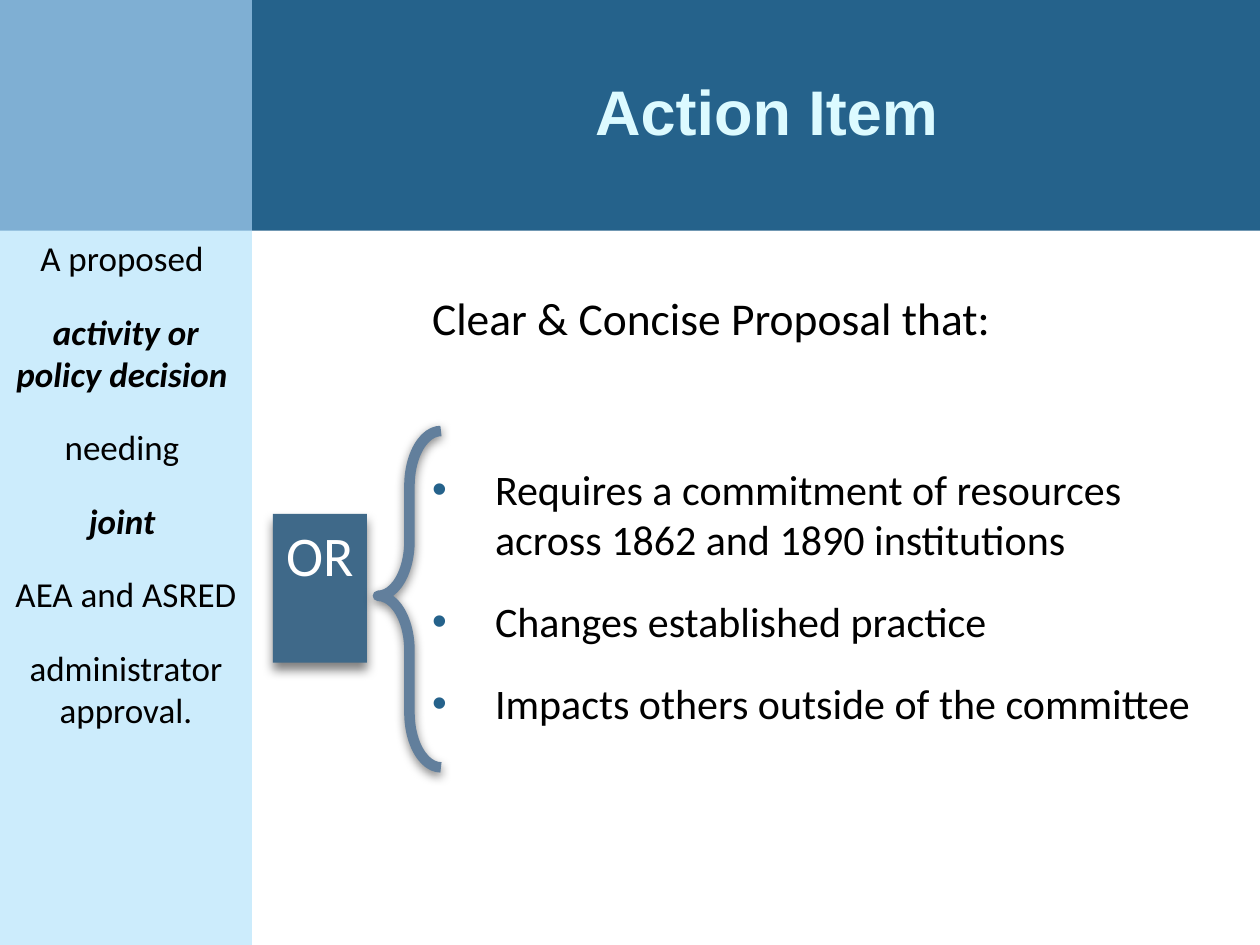
from dataclasses import dataclass

from lxml import etree
from pptx import Presentation
from pptx.dml.color import RGBColor
from pptx.enum import shapes, text
from pptx.oxml import ns
from pptx.util import Cm, Pt


@dataclass(frozen=True)
class Theme:
    banner: str = "25628B"
    sidebar: str = "CCECFC"
    corner: str = "7FAFD3"
    title: str = "DCFAFF"
    body: str = "000000"
    label_fill: str = "3F6989"
    label: str = "FFFFFF"
    brace: str = "627F9C"
    title_size: int = 36
    label_size: int = 32
    heading_size: int = 26
    bullet_size: int = 24
    sidebar_size: int = 20
    title_font: str = "Arial"
    body_font: str = "Calibri"


theme = Theme()


def add_run(paragraph, words, size, color, font=theme.body_font, bold=False, italic=False):
    run = paragraph.add_run()
    run.text = words
    run.font.name = font
    run.font.size = Pt(size)
    run.font.bold = bold
    run.font.italic = italic
    run.font.color.rgb = RGBColor.from_string(color)


def add_shadow(shape, distance):
    """Give the shape a soft black shadow falling straight down."""
    shape.shadow.inherit = False
    effects = shape._element.spPr.find(ns.qn("a:effectLst"))
    shadow = etree.SubElement(effects, ns.qn("a:outerShdw"), blurRad=str(Pt(6)),
                              dist=str(Pt(distance)), dir="5400000", rotWithShape="0")
    color = etree.SubElement(shadow, ns.qn("a:srgbClr"), val="000000")
    etree.SubElement(color, ns.qn("a:alpha"), val="50000")


presentation = Presentation()
presentation.slide_width = Cm(25.4)
presentation.slide_height = Cm(19.05)
slide = presentation.slides.add_slide(presentation.slide_layouts[6])

# Background panels
sidebar_width = Cm(5.08)
banner_height = Cm(4.65)
panels = [
    (Cm(1.27), Cm(24.13), banner_height, theme.banner),
    (0, sidebar_width, presentation.slide_height, theme.sidebar),
    (0, sidebar_width, banner_height, theme.corner),
]
for left, width, height, color in panels:
    panel = slide.shapes.add_shape(shapes.MSO_SHAPE.RECTANGLE, left, 0, width, height)
    panel.shadow.inherit = False
    panel.fill.solid()
    panel.fill.fore_color.rgb = RGBColor.from_string(color)
    panel.line.fill.background()

# Title
title = slide.shapes.add_textbox(Cm(6.78), Cm(0.64), Cm(17.35), Cm(3.18)).text_frame
title.word_wrap = True
title.vertical_anchor = text.MSO_ANCHOR.MIDDLE
title.paragraphs[0].alignment = text.PP_ALIGN.CENTER
add_run(title.paragraphs[0], "Action Item", theme.title_size, theme.title,
        theme.title_font, bold=True)

# Proposal criteria
criteria = slide.shapes.add_textbox(Cm(8.46), Cm(5.72), Cm(16.51), Cm(10.67)).text_frame
criteria.word_wrap = True
add_run(criteria.paragraphs[0], "Clear & Concise Proposal that:",
        theme.heading_size, theme.body)
bullets = [
    "Requires a commitment of resources across 1862 and 1890 institutions",
    "Changes established practice",
    "Impacts others outside of the committee",
]
for index, words in enumerate(bullets):
    paragraph = criteria.add_paragraph()
    paragraph.space_before = Pt(18 if index else 68)
    properties = paragraph._p.get_or_add_pPr()
    properties.set("marL", str(Cm(1.27)))
    properties.set("indent", str(-Cm(1.27)))
    bullet_color = etree.SubElement(properties, ns.qn("a:buClr"))
    etree.SubElement(bullet_color, ns.qn("a:srgbClr"), val=theme.banner)
    etree.SubElement(properties, ns.qn("a:buFont"), typeface="Arial")
    etree.SubElement(properties, ns.qn("a:buChar"), char="•")
    add_run(paragraph, words, theme.bullet_size, theme.body)

# Sidebar definition
definition = slide.shapes.add_textbox(0, banner_height, sidebar_width, Cm(11.51)).text_frame
definition.word_wrap = True
phrases = [
    ("A proposed ", False),
    ("activity or policy decision ", True),
    ("needing ", False),
    ("joint ", True),
    ("AEA and ASRED ", False),
    ("administrator approval.", False),
]
for index, (words, emphasis) in enumerate(phrases):
    paragraph = definition.add_paragraph() if index else definition.paragraphs[0]
    paragraph.alignment = text.PP_ALIGN.CENTER
    if index:
        paragraph.space_before = Pt(18)
    add_run(paragraph, words, theme.sidebar_size, theme.body, bold=emphasis, italic=emphasis)

# "OR" label and brace
label = slide.shapes.add_shape(shapes.MSO_SHAPE.RECTANGLE,
                               Cm(5.5), Cm(10.36), Cm(1.9), Cm(3))
label.fill.solid()
label.fill.fore_color.rgb = RGBColor.from_string(theme.label_fill)
label.line.fill.background()
add_shadow(label, 4)
label.text_frame.word_wrap = True
label.text_frame.vertical_anchor = text.MSO_ANCHOR.TOP
label.text_frame.paragraphs[0].alignment = text.PP_ALIGN.CENTER
add_run(label.text_frame.paragraphs[0], "OR", theme.label_size, theme.label)

brace = slide.shapes.add_shape(shapes.MSO_SHAPE.LEFT_BRACE,
                               Cm(7.62), Cm(8.69), Cm(1.27), Cm(6.78))
brace.adjustments[0] = 0.87
brace.adjustments[1] = 0.49
brace.fill.background()
brace.line.color.rgb = RGBColor.from_string(theme.brace)
brace.line.width = Pt(6)
add_shadow(brace, 2)

presentation.save("out.pptx")
